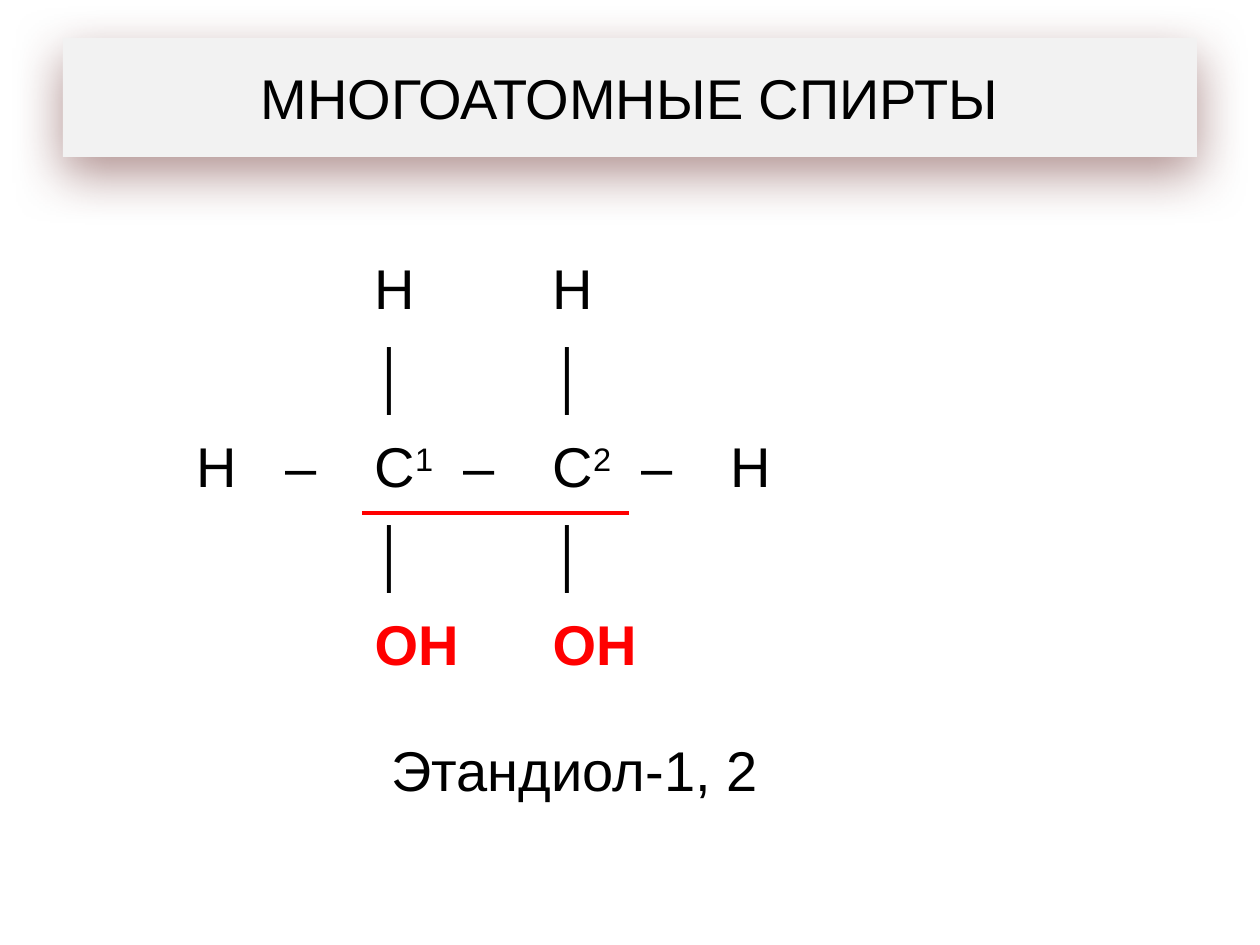
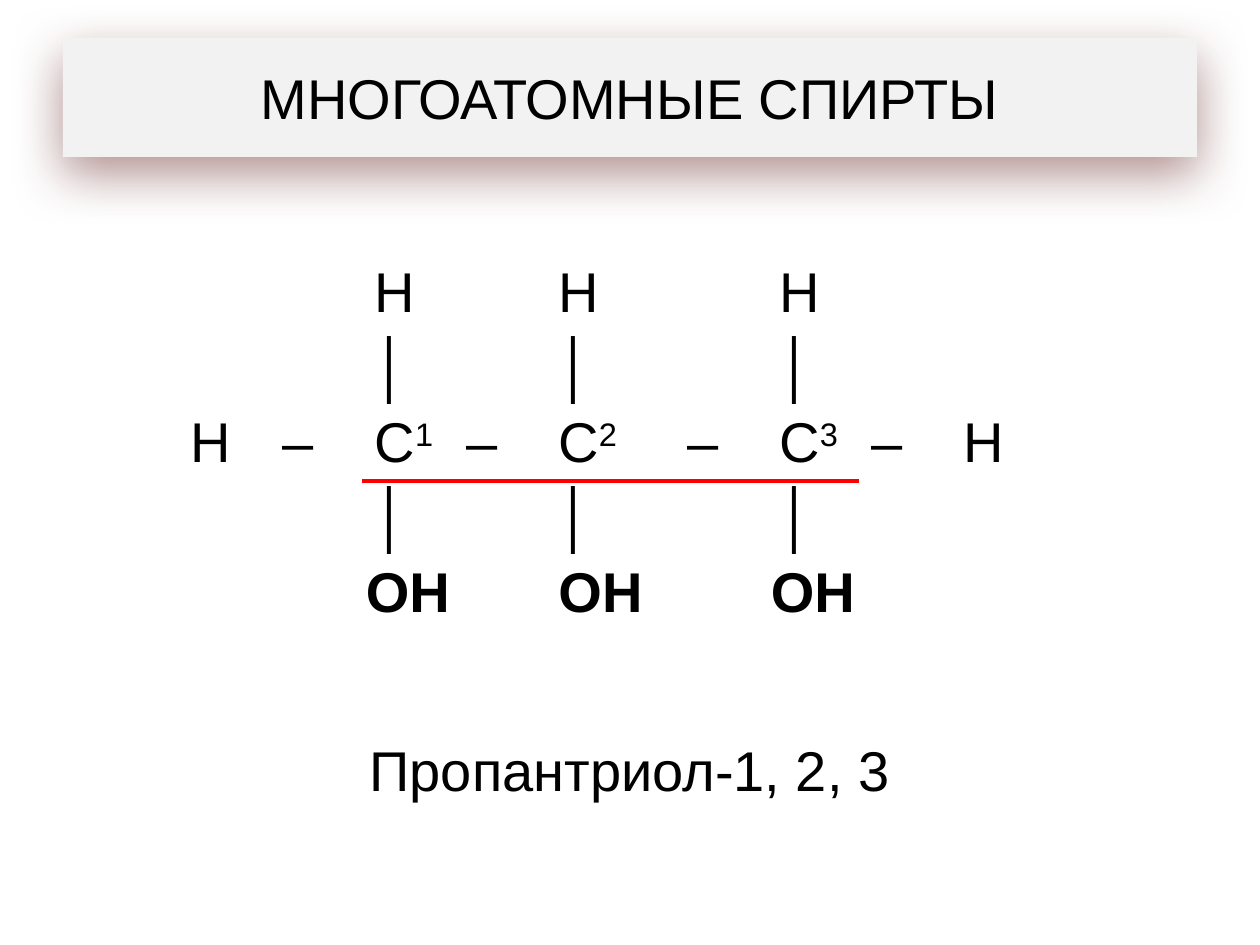
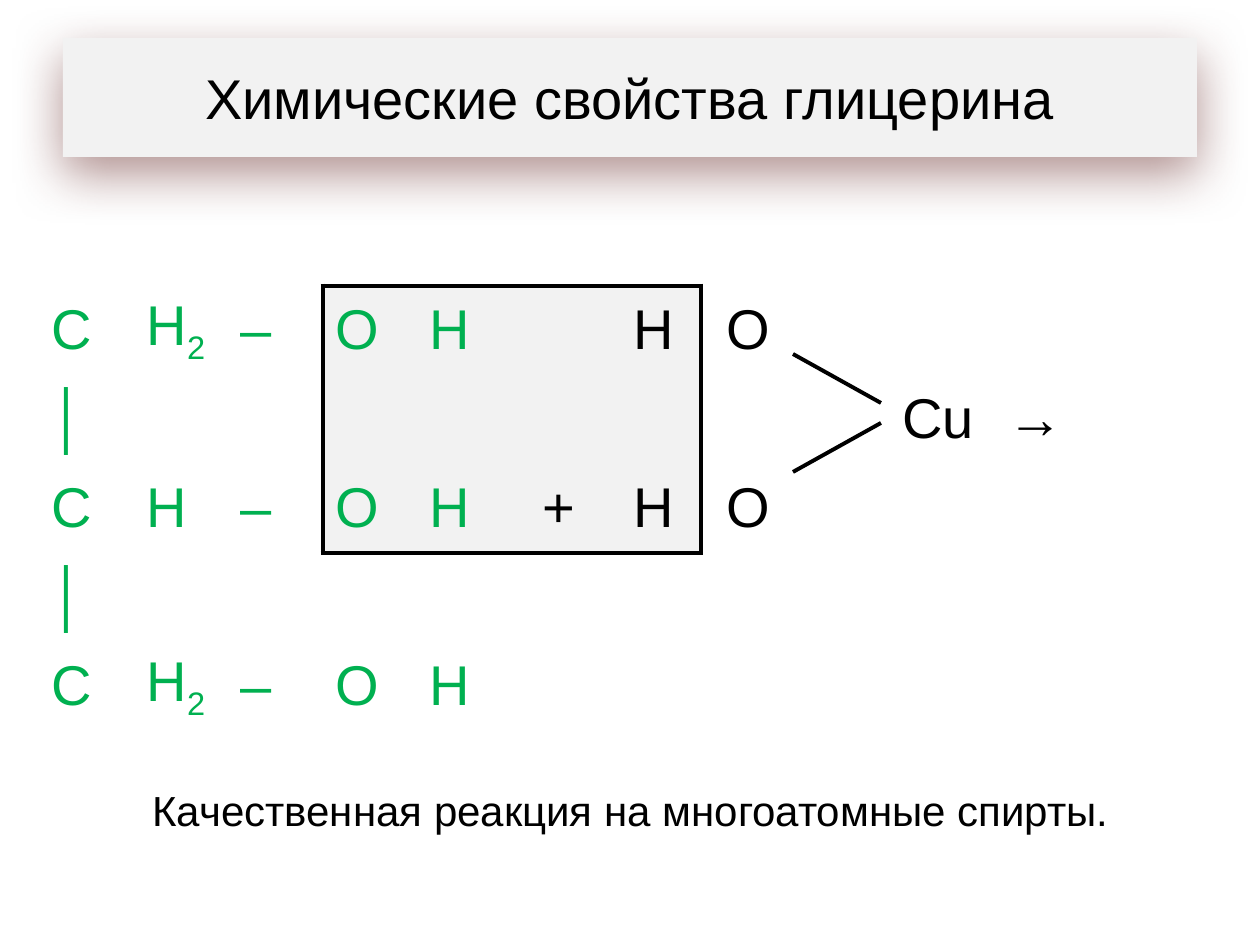
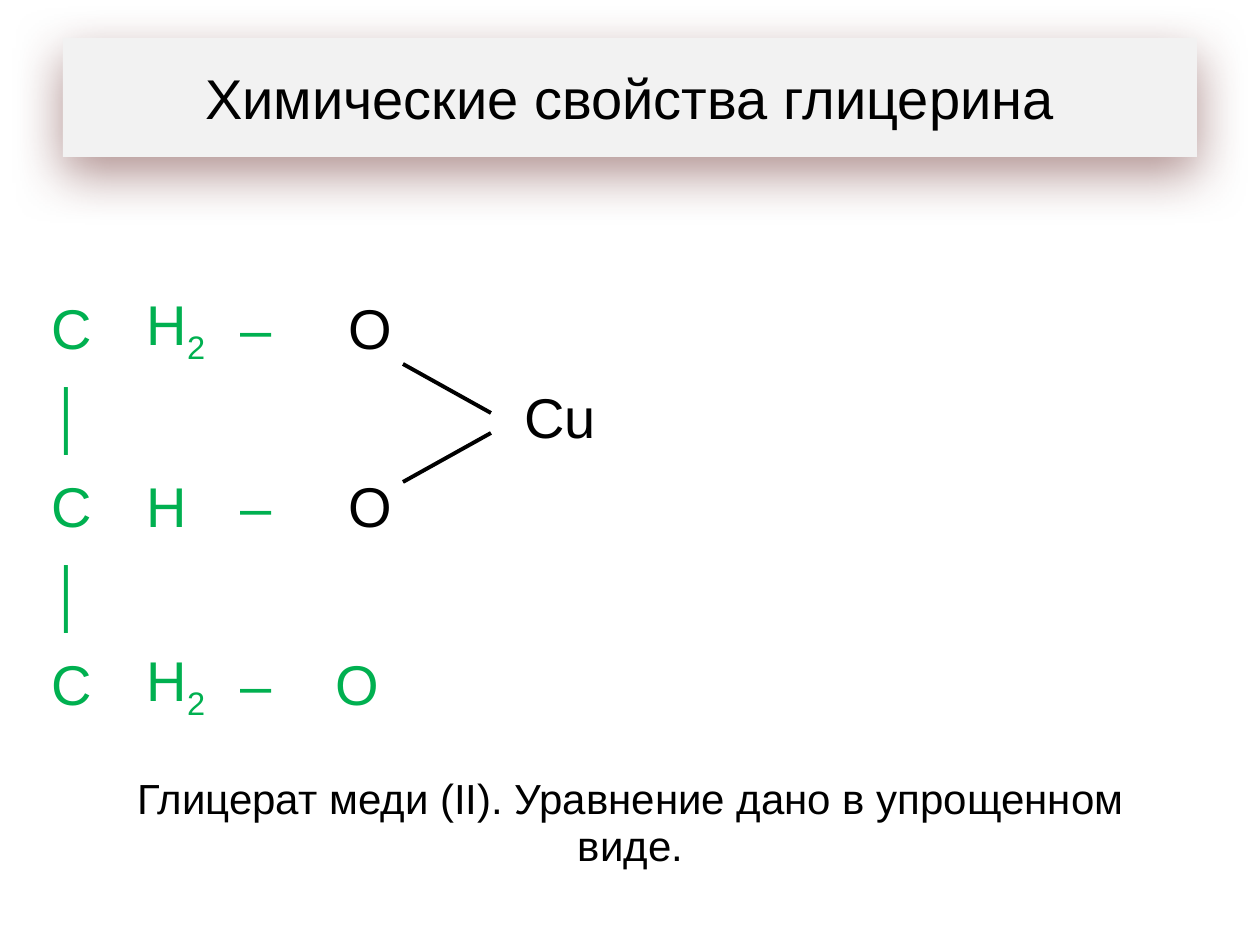
import pptx
import pptx.util
import pptx.dml.color
import pptx.enum.shapes
import pptx.enum.text
import pptx.oxml.ns
import lxml.etree

PX = 914400 // 126
FONT = "Arial"
COLORS = {"text": "000000", "band": "F2F2F2", "shadow": "632523",
          "red": "FF0000", "green": "00B050"}
NO_STYLE = "{2D5ABB26-0587-4C30-8999-92F81FD0307C}"
CENTER = pptx.enum.text.PP_ALIGN.CENTER
TITLE_BOX = (63, 38, 1134, 119)
ROW = 89
BOND_WIDTH, BOND_RISE, BOND_SPAN = 88, 49, 118

# Side: row step and column step to the neighbour, side that the neighbour shares
SIDES = {"L": (0, -1, "R"), "R": (0, 1, "L"), "T": (-1, 0, "B"), "B": (1, 0, "T")}

GREEN = {"color": "green"}
BLACK = {"color": "text"}
MIDDLE = {"color": "text", "align": CENTER}
RED_BOLD = {"color": "red", "bold": True}
BOLD = {"bold": True}
BOLD_MIDDLE = {"bold": True, "align": CENTER}
NOTE = {"size": 24, "align": CENTER}

ALCOHOLS = "МНОГОАТОМНЫЕ СПИРТЫ"
GLYCEROL = "Химические свойства глицерина"

# In a formula "^" raises and "_" lowers what follows it.
# Areas are first row, first column, last row, last column.
SLIDES = [
    {
        "title": ALCOHOLS,
        "formula": {
            "at": (184, 246), "columns": [89] * 6 + [95, 84, 89, 89], "row": ROW,
            "cells": [
                ["", "", "H", "", "H"],
                ["", "", "│", "", "│"],
                ["H", "–", "C^1", "–", "C^2", "–", "H"],
                ["", "", "│", "", "│"],
                ["", "", "OH", "", "OH"],
            ],
            "formats": {(4, 2): RED_BOLD, (4, 4): RED_BOLD},
            "merged": [(4, 2, 4, 3), (4, 4, 4, 5)],
            "outline": {"area": (2, 2, 2, 4), "sides": "B", "color": "red"},
        },
        "caption": {"at": (379, 728), "columns": [501], "row": ROW,
                    "cells": [["Этандиол-1, 2"]]},
    },
    {
        "title": ALCOHOLS,
        "formula": {
            "at": (178, 256), "columns": [92] * 4 + [129] + [92] * 4, "row": 75,
            "cells": [
                ["", "", "H", "", "H", "", "H"],
                ["", "", "│", "", "│", "", "│"],
                ["H", "–", "C^1", "–", "C^2", "–", "C^3", "–", "H"],
                ["", "", "│", "", "│", "", "│"],
                ["", "OH", "", "", "OH", "OH"],
            ],
            "formats": {(4, 1): BOLD_MIDDLE, (4, 4): BOLD, (4, 5): BOLD_MIDDLE},
            "merged": [(4, 1, 4, 3), (4, 5, 4, 7)],
            "outline": {"area": (2, 2, 2, 6), "sides": "B", "color": "red"},
        },
        "caption": {"at": (357, 728), "columns": [547], "row": ROW,
                    "cells": [["Пропантриол-1, 2, 3"]]},
    },
    {
        "title": GLYCEROL,
        "formula": {
            "at": (39, 286), "columns": [95, 94] * 4 + [95, 105, 94, 94], "row": ROW,
            "cells": [
                ["C", "H_2", "–", "O", "H", "", "H", "O"],
                ["│", "", "", "", "", "", "", "", "", "Cu", "→"],
                ["C", "H", "–", "O", "H", "+", "H", "O"],
                ["│"],
                ["C", "H_2", "–", "O", "H"],
            ],
            "default": GREEN,
            "formats": {(0, 6): MIDDLE, (0, 7): MIDDLE, (1, 9): BLACK, (1, 10): BLACK,
                        (2, 5): MIDDLE, (2, 6): MIDDLE, (2, 7): MIDDLE},
            "outline": {"area": (0, 3, 2, 6), "sides": "LRTB", "color": "text",
                        "fill": "band"},
        },
        "caption": {"at": (110, 767), "columns": [1041], "row": ROW,
                    "cells": [["Качественная реакция на многоатомные спирты."]],
                    "default": NOTE},
        "bonds": (793, 354),
    },
    {
        "title": GLYCEROL,
        "formula": {
            "at": (39, 286), "columns": [95, 94] * 2 + [95, 100], "row": ROW,
            "cells": [
                ["C", "H_2", "–", "O"],
                ["│", "", "", "", "", "Cu"],
                ["C", "H", "–", "O"],
                ["│"],
                ["C", "H_2", "–", "O"],
            ],
            "default": GREEN,
            "formats": {(0, 3): MIDDLE, (1, 5): BLACK, (2, 3): MIDDLE},
        },
        "caption": {"at": (110, 767), "columns": [1041], "row": 113,
                    "cells": [["Глицерат меди (II). Уравнение дано в упрощенном виде."]],
                    "default": NOTE},
        "bonds": (403, 364),
    },
]


def rgb(name):
    return pptx.dml.color.RGBColor.from_string(COLORS[name])


def add_element(parent, tag, **attributes):
    element = lxml.etree.SubElement(parent, pptx.oxml.ns.qn(tag))
    for key, value in attributes.items():
        element.set(key, str(value))
    return element


def write_text(frame, text, size=32, color="text", bold=False, align=None):
    paragraph = frame.paragraphs[0]
    paragraph.alignment = align
    mark, baseline = ("^", 30000) if "^" in text else ("_", -25000)
    base, _, index = text.partition(mark)
    for part, shift in ((base, 0), (index, baseline)):
        if not part:
            continue
        run = paragraph.add_run()
        run.text = part
        run.font.name = FONT
        run.font.size = pptx.util.Pt(size)
        run.font.bold = bold
        run.font.color.rgb = rgb(color)
        if shift:
            run._r.get_or_add_rPr().set("baseline", str(shift))


def add_title(slide, text):
    band = slide.shapes.add_shape(pptx.enum.shapes.MSO_SHAPE.RECTANGLE,
                                  *[value * PX for value in TITLE_BOX])
    band.fill.solid()
    band.fill.fore_color.rgb = rgb("band")
    band.line.fill.background()
    band.shadow.inherit = False
    effects = band._element.spPr.find(pptx.oxml.ns.qn("a:effectLst"))
    shadow = add_element(effects, "a:outerShdw", blurRad=pptx.util.Pt(30),
                         dist=pptx.util.Pt(10), dir=90 * 60000, rotWithShape=0)
    shade = add_element(shadow, "a:srgbClr", val=COLORS["shadow"])
    add_element(shade, "a:alpha", val=50000)
    band.text_frame.word_wrap = True
    band.text_frame.vertical_anchor = pptx.enum.text.MSO_ANCHOR.MIDDLE
    write_text(band.text_frame, text, align=CENTER)


def find_edges(area, sides, color, fill=None):
    """Return the filled cells, and the colour of each (row, column, side) to draw.

    An edge counts for the cell inside the area and for its outer neighbour.
    """
    top, left, bottom, right = area
    inside = [(row, column) for row in range(top, bottom + 1)
              for column in range(left, right + 1)]
    edges = {}
    for side in sides:
        row_step, column_step, shared = SIDES[side]
        for row, column in inside:
            neighbour = (row + row_step, column + column_step)
            if neighbour not in inside:
                edges[row, column, side] = color
                edges[(*neighbour, shared)] = color
    return (inside if fill else []), edges


def set_borders(cell, colors):
    """Set all four sides, in the order of SIDES; None leaves a side bare."""
    properties = cell._tc.get_or_add_tcPr()
    fill = properties[0]
    for side, color in zip(SIDES, colors):
        border = add_element(properties, "a:ln" + side,
                             w=pptx.util.Pt(3) if color else 0)
        if color:
            add_element(add_element(border, "a:solidFill"), "a:srgbClr",
                        val=COLORS[color])
        else:
            add_element(border, "a:noFill")
        fill.addprevious(border)


def add_grid(slide, at, columns, row, cells, default=None, formats=None,
             merged=(), outline=None):
    """Add a plain table whose short rows are filled up with blank cells."""
    box = (*at, sum(columns), row * len(cells))
    frame = slide.shapes.add_table(len(cells), len(columns),
                                   *[value * PX for value in box])
    table = frame.table
    table.first_row = table.horz_banding = False
    table._tbl.tblPr.find(pptx.oxml.ns.qn("a:tableStyleId")).text = NO_STYLE
    for column, width in zip(table.columns, columns):
        column.width = width * PX
    for table_row in table.rows:
        table_row.height = row * PX
    for top, left, bottom, right in merged:
        table.cell(top, left).merge(table.cell(bottom, right))
    filled, edges = find_edges(**outline) if outline else ([], {})
    for row_index, texts in enumerate(cells):
        for column_index in range(len(columns)):
            position = (row_index, column_index)
            cell = table.cell(*position)
            cell.vertical_anchor = pptx.enum.text.MSO_ANCHOR.MIDDLE
            cell.margin_top = cell.margin_bottom = 5 * PX
            if position in filled:
                cell.fill.solid()
                cell.fill.fore_color.rgb = rgb(outline["fill"])
            else:
                cell.fill.background()
            set_borders(cell, [edges.get((*position, side)) for side in SIDES])
            if column_index < len(texts) and texts[column_index]:
                style = (formats or {}).get(position, default or {})
                write_text(cell.text_frame, texts[column_index], **style)


def add_bonds(slide, left, top):
    """Add the two slanted bonds that join both oxygens to the copper."""
    group = slide.shapes.add_group_shape()
    bottom = top + BOND_SPAN
    for start, end in ((top, top + BOND_RISE), (bottom, bottom - BOND_RISE)):
        ends = (left, start, left + BOND_WIDTH, end)
        bond = group.shapes.add_connector(pptx.enum.shapes.MSO_CONNECTOR.STRAIGHT,
                                          *[value * PX for value in ends])
        bond.line.color.rgb = rgb("text")
        bond.line.width = pptx.util.Pt(2.25)
        add_element(bond._element.spPr, "a:effectLst")


def main():
    presentation = pptx.Presentation()
    presentation.slide_width = pptx.util.Inches(10)
    presentation.slide_height = pptx.util.Inches(7.5)
    for content in SLIDES:
        slide = presentation.slides.add_slide(presentation.slide_layouts[6])
        add_title(slide, content["title"])
        add_grid(slide, **content["formula"])
        add_grid(slide, **content["caption"])
        if "bonds" in content:
            add_bonds(slide, *content["bonds"])
    presentation.save("out.pptx")


if __name__ == "__main__":
    main()
